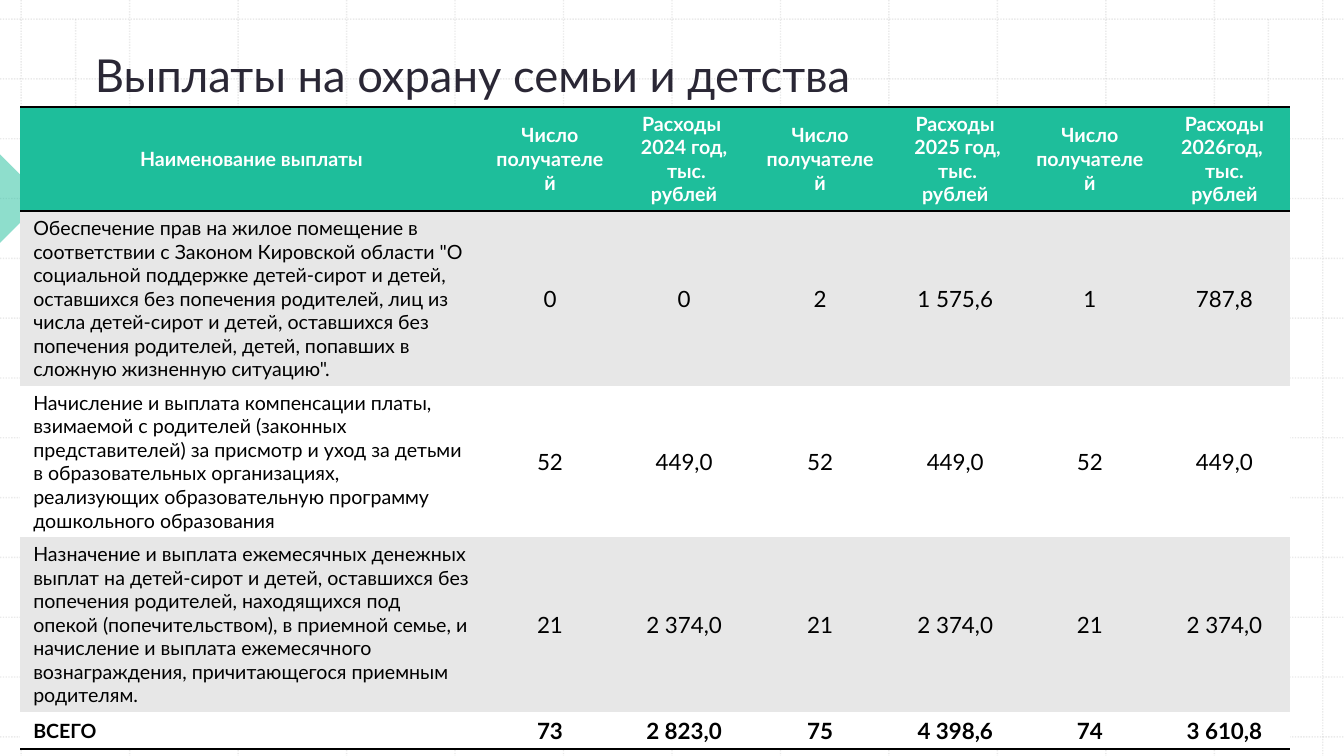
"""Build the slide with the table of family and childhood protection payments."""
from lxml import etree
from pptx import Presentation
from pptx.dml.color import RGBColor
from pptx.enum.dml import MSO_LINE
from pptx.enum.shapes import MSO_CONNECTOR, MSO_SHAPE
from pptx.enum.text import MSO_ANCHOR, PP_ALIGN
from pptx.oxml.ns import qn
from pptx.util import Inches, Pt

LEFT, CENTER = PP_ALIGN.LEFT, PP_ALIGN.CENTER
MIDDLE, BOTTOM = MSO_ANCHOR.MIDDLE, MSO_ANCHOR.BOTTOM
STRAIGHT, TRIANGLE = MSO_CONNECTOR.STRAIGHT, MSO_SHAPE.RIGHT_TRIANGLE
DOTS = MSO_LINE.ROUND_DOT

TITLE = "Выплаты на охрану семьи и детства"
COUNT = "Число получателей"
HEADER = [
    "Наименование выплаты",
    COUNT, "Расходы \n2024 год,\n тыс. рублей",
    COUNT, "Расходы\n 2025 год,\n тыс. рублей",
    COUNT, "Расходы\n2026год, \nтыс. рублей",
]
PAYMENTS = [
    ["Обеспечение прав на жилое помещение в соответствии с Законом Кировской области "
     "\"О социальной поддержке детей-сирот и детей, оставшихся без попечения родителей, "
     "лиц из числа детей-сирот и детей, оставшихся без попечения родителей, детей, "
     "попавших в сложную жизненную ситуацию\".",
     "0", "0", "2", "1 575,6", "1", "787,8"],
    ["Начисление и выплата компенсации платы, взимаемой с родителей (законных "
     "представителей) за присмотр и уход за детьми в образовательных организациях, "
     "реализующих образовательную программу дошкольного образования",
     "52", "449,0", "52", "449,0", "52", "449,0"],
    ["Назначение и выплата ежемесячных денежных выплат на детей-сирот и детей, "
     "оставшихся без попечения родителей, находящихся под опекой (попечительством), "
     "в приемной семье, и начисление и выплата ежемесячного вознаграждения, "
     "причитающегося приемным родителям.",
     "21", "2 374,0", "21", "2 374,0", "21", "2 374,0"],
]
TOTAL = ["ВСЕГО", "73", "2 823,0", "75", "4 398,6", "74", "3 610,8"]
ROWS = [HEADER, *PAYMENTS, TOTAL]
COL_WIDTHS = [4.59, 1.33, 1.33, 1.37, 1.31, 1.36, 1.31]
ROW_HEIGHTS = [1.01, 1.69, 1.47, 1.69, 0.36]

W, H = 13.33, 7.5
MARGIN_X, MARGIN_Y, GRID = 0.21, 0.19, 12
FRAME_X = 0.75
FONT = "Lato"
NO_STYLE = "{2D5ABB26-0587-4C30-8999-92F81FD0307C}"
COLORS = {"grid": "BCBCBC", "accent": "1EBE9B", "title": "2A2735",
          "white": "FFFFFF", "band": "E7E7E7", "black": "000000"}


def rgb(name):
    return RGBColor.from_string(COLORS[name])


def set_alpha(fill, percent):
    color = next(fill.iter(qn("a:srgbClr")))
    etree.SubElement(color, qn("a:alpha")).set("val", str(percent * 1000))


def write(tf, text, size, color="black", bold=False, align=LEFT):
    """Fill a text frame with one paragraph per line of text."""
    tf.word_wrap = True
    for i, line in enumerate(text.split("\n")):
        p = tf.paragraphs[0] if i == 0 else tf.add_paragraph()
        p.alignment = align
        r = p.add_run()
        r.text = line
        r.font.name, r.font.size, r.font.bold = FONT, Pt(size), bold
        r.font.color.rgb = rgb(color)


def grid_line(s, x1, y1, x2, y2):
    line = s.shapes.add_connector(STRAIGHT, Inches(x1), Inches(y1), Inches(x2), Inches(y2))
    line.line.color.rgb = rgb("grid")
    line.line.width = Pt(1)
    line.line.dash_style = DOTS
    sp_pr = line._element.spPr
    set_alpha(sp_pr, 30)
    etree.SubElement(sp_pr, qn("a:effectLst"))


def draw_background(s):
    step_x, step_y = (W - 2 * MARGIN_X) / GRID, (H - 2 * MARGIN_Y) / GRID
    for i in range(GRID + 1):
        x, y = MARGIN_X + i * step_x, MARGIN_Y + i * step_y
        grid_line(s, x, 0, x, H)
        grid_line(s, 0, y, W, y)
    for x in (FRAME_X, W - FRAME_X):
        grid_line(s, x, MARGIN_Y, x, H - MARGIN_Y)
    side = 0.62
    sp = s.shapes.add_shape(TRIANGLE, Inches(-side / 2), Inches(1.66), Inches(side), Inches(side))
    sp.rotation = 225
    sp.shadow.inherit = False
    sp.fill.solid()
    sp.fill.fore_color.rgb = rgb("accent")
    set_alpha(sp._element.spPr, 50)
    sp.line.fill.background()


def add_title(s):
    title = s.shapes.title
    title.left, title.top, title.width, title.height = map(Inches, (0.84, 0.32, 7.91, 0.74))
    title.text_frame.vertical_anchor = BOTTOM
    write(title.text_frame, TITLE, 32.4, color="title")
    s.shapes._spTree.append(title._element)


def set_borders(cell, sides):
    tc_pr = cell._tc.get_or_add_tcPr()
    for i, side in enumerate(sides):
        ln = etree.Element(qn("a:ln" + side), w=str(Pt(2)))
        fill = etree.SubElement(ln, qn("a:solidFill"))
        etree.SubElement(fill, qn("a:srgbClr"), val=COLORS["black"])
        tc_pr.insert(i, ln)


def add_payments_table(s):
    frame = s.shapes.add_table(len(ROWS), len(COL_WIDTHS), Inches(0.2), Inches(1.06),
                               Inches(sum(COL_WIDTHS)), Inches(sum(ROW_HEIGHTS)))
    table = frame.table
    table.horz_banding = False
    table._tbl.tblPr.find(qn("a:tableStyleId")).text = NO_STYLE
    for column, width in zip(table.columns, COL_WIDTHS):
        column.width = Inches(width)
    last = len(ROWS) - 1
    for i, (row, height) in enumerate(zip(ROWS, ROW_HEIGHTS)):
        table.rows[i].height = Inches(height)
        background = "accent" if i == 0 else "band" if i % 2 else "white"
        for j, text in enumerate(row):
            cell = table.cell(i, j)
            cell.vertical_anchor = MIDDLE
            cell.margin_left = cell.margin_right = Inches(0.13)
            cell.margin_top = cell.margin_bottom = Inches(0.05)
            cell.fill.solid()
            cell.fill.fore_color.rgb = rgb(background)
            set_borders(cell, {0: "TB", last: "B"}.get(i, ""))
            write(cell.text_frame, text, 14 if i == 0 or j == 0 else 16,
                  color="white" if i == 0 else "black", bold=i in (0, last),
                  align=CENTER if i == 0 or j else LEFT)


def main():
    prs = Presentation()
    prs.slide_width, prs.slide_height = Inches(W), Inches(H)
    s = prs.slides.add_slide(prs.slide_layouts[5])
    s.background.fill.solid()
    s.background.fill.fore_color.rgb = rgb("white")
    draw_background(s)
    add_title(s)
    add_payments_table(s)
    prs.save("out.pptx")


if __name__ == "__main__":
    main()
